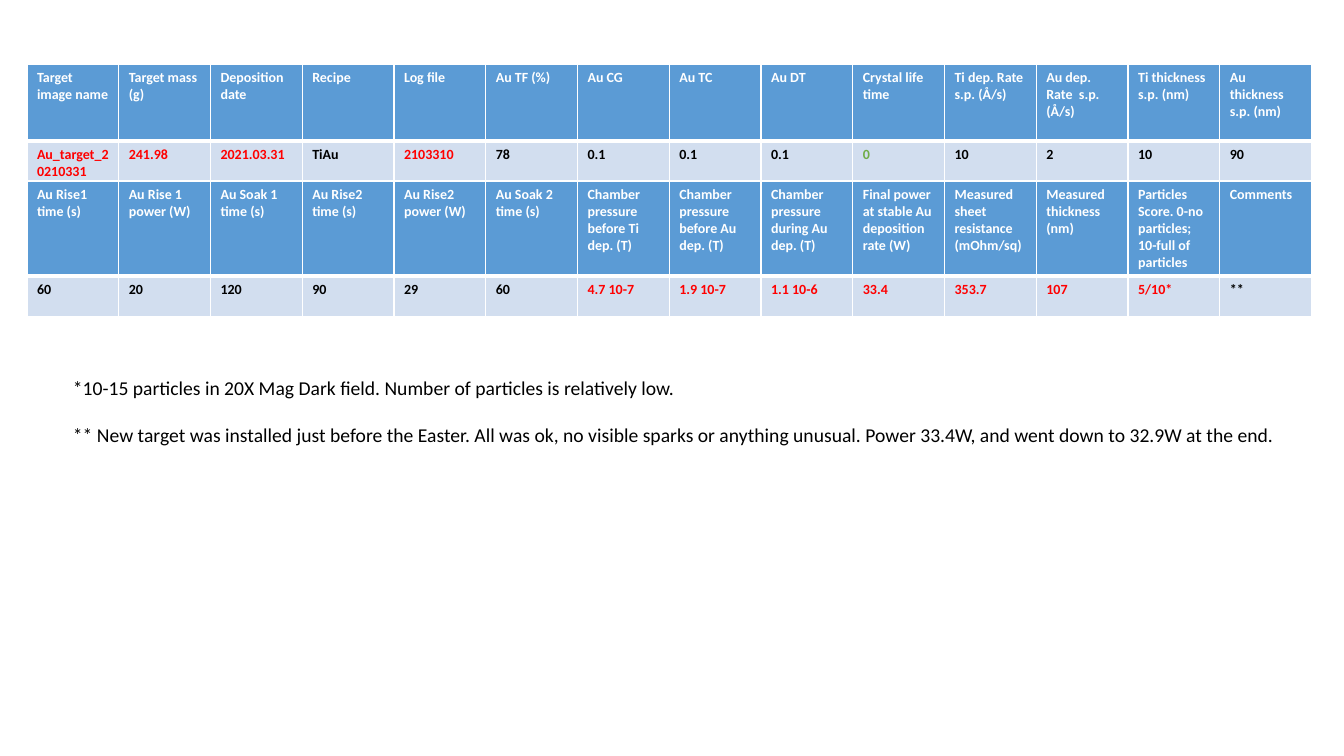
import pptx
import pptx.util
import pptx.dml.color
import pptx.oxml
import pptx.oxml.ns

EMU_PER_PX = 9071
FONT = "Calibri"
COLORS = {
    "header": "5B9BD5",
    "values": "D2DEEF",
    "white": "FFFFFF",
    "black": "000000",
    "red": "FF0000",
    "green": "70AD47",
}

TARGET_FIELDS = [
    ("Target image name", "Au_target_20210331", "red"),
    ("Target mass (g)", "241.98", "red"),
    ("Deposition date", "2021.03.31", "red"),
    ("Recipe", "TiAu", "black"),
    ("Log file", "2103310", "red"),
    ("Au TF (%)", "78", "black"),
    ("Au CG", "0.1", "black"),
    ("Au TC", "0.1", "black"),
    ("Au DT", "0.1", "black"),
    ("Crystal life time", "0", "green"),
    ("Ti dep. Rate s.p. (Å/s)", "10", "black"),
    ("Au dep. Rate  s.p. (Å/s)", "2", "black"),
    ("Ti thickness s.p. (nm)", "10", "black"),
    ("Au thickness s.p. (nm)", "90", "black"),
]
PROCESS_FIELDS = [
    ("Au Rise1 time (s)", "60", "black"),
    ("Au Rise 1 power (W)", "20", "black"),
    ("Au Soak 1 time (s)", "120", "black"),
    ("Au Rise2 time (s)", "90", "black"),
    ("Au Rise2 power (W)", "29", "black"),
    ("Au Soak 2 time (s)", "60", "black"),
    ("Chamber pressure before Ti dep. (T)", "4.7 10-7", "red"),
    ("Chamber pressure before Au dep. (T)", "1.9 10-7", "red"),
    ("Chamber pressure during Au dep. (T)", "1.1 10-6", "red"),
    ("Final power at stable Au deposition rate (W)", "33.4", "red"),
    ("Measured sheet resistance (mOhm/sq)", "353.7", "red"),
    ("Measured thickness (nm)", "107", "red"),
    ("Particles\nScore. 0-no particles; 10-full of particles", "5/10*", "red"),
    ("Comments", "**", "black"),
]
FOOTNOTES = [
    (371, 636, "*10-15 particles in 20X Mag Dark field. Number of particles is relatively low."),
    (418, 1242, "** New target was installed just before the Easter. All was ok, no visible "
                "sparks or anything unusual. Power 33.4W, and went down to 32.9W at the end."),
]


def px(length):
    return pptx.util.Emu(length * EMU_PER_PX)


def rgb(color):
    return pptx.dml.color.RGBColor.from_string(COLORS[color])


def write_text(frame, text, *, size, color="black", bold=False):
    frame.text = text
    for paragraph in frame.paragraphs:
        for run in paragraph.runs:
            run.font.name = FONT
            run.font.size = pptx.util.Pt(size)
            run.font.bold = bold
            run.font.color.rgb = rgb(color)


def add_borders(cell, **widths):
    properties = cell._tc.get_or_add_tcPr()
    for side in ("L", "R", "T", "B"):
        width = pptx.util.Pt(widths.get(side, 1))
        properties.append(pptx.oxml.parse_xml(
            f'<a:ln{side} {pptx.oxml.ns.nsdecls("a")} w="{width}">'
            f'<a:solidFill><a:srgbClr val="{COLORS["white"]}"/></a:solidFill>'
            f'</a:ln{side}>'))


def fill_cell(cell, text, *, fill, color, **border_widths):
    add_borders(cell, **border_widths)
    cell.fill.solid()
    cell.fill.fore_color.rgb = rgb(fill)
    write_text(cell.text_frame, text, size=10, color=color, bold=True)


def add_field_table(slide, fields, top, header_height, value_height):
    table = slide.shapes.add_table(
        2, len(fields), px(27), px(top), px(1285), px(header_height + value_height)).table
    table.rows[0].height = px(header_height)
    table.rows[1].height = px(value_height)
    for column, (label, value, color) in enumerate(fields):
        fill_cell(table.cell(0, column), label, fill="header", color="white", B=3)
        fill_cell(table.cell(1, column), value, fill="values", color=color, T=3)


def add_footnote(slide, top, width, note):
    frame = slide.shapes.add_textbox(px(63), px(top), px(width), px(34)).text_frame
    frame.word_wrap = False
    write_text(frame, note, size=14)


def main():
    deck = pptx.Presentation()
    deck.slide_width = px(1344)
    deck.slide_height = px(756)
    slide = deck.slides.add_slide(deck.slide_layouts[6])
    add_field_table(slide, TARGET_FIELDS, 64, 77, 41)
    add_field_table(slide, PROCESS_FIELDS, 181, 95, 41)
    for top, width, note in FOOTNOTES:
        add_footnote(slide, top, width, note)
    deck.save("out.pptx")


if __name__ == "__main__":
    main()
